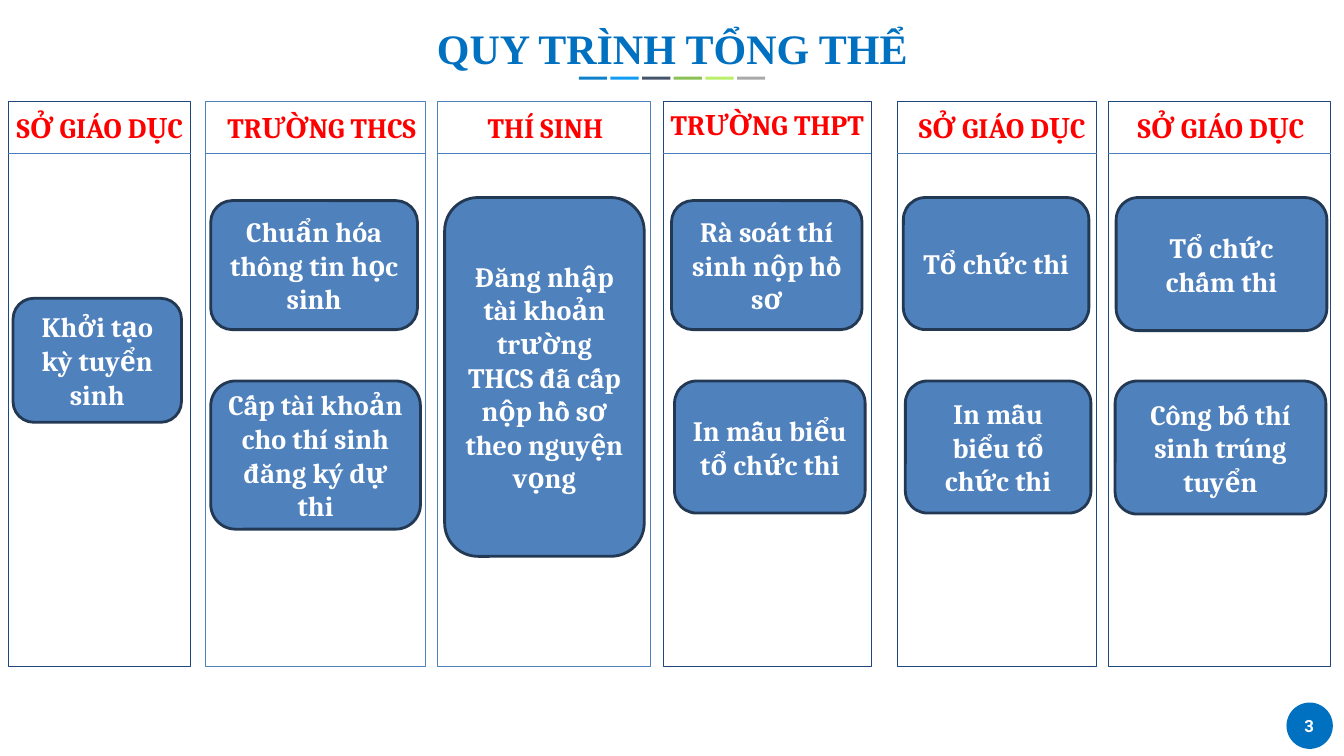
from dataclasses import dataclass

from pptx import Presentation
from pptx.dml.color import RGBColor
from pptx.enum.shapes import MSO_CONNECTOR, MSO_SHAPE
from pptx.enum.text import MSO_ANCHOR, PP_ALIGN
from pptx.oxml.ns import qn
from pptx.util import Inches, Pt

RECTANGLE = MSO_SHAPE.RECTANGLE
ROUNDED = MSO_SHAPE.ROUNDED_RECTANGLE
OVAL = MSO_SHAPE.OVAL
STRAIGHT = MSO_CONNECTOR.STRAIGHT
CENTER = PP_ALIGN.CENTER
MIDDLE = MSO_ANCHOR.MIDDLE
TOP = MSO_ANCHOR.TOP

COLORS = {
    "title": "0070C0", "heading": "FF0000", "white": "FFFFFF",
    "step": "4F81BD", "step_edge": "233953", "rule": "4B7EBC",
    "navy": "1F497D", "blue": "4F81BD",
}
ACCENTS = ["0E80C9", "119CF4", "445469", "8AC153", "BAEF69", "A9A8AB"]
LANE_TOP, LANE_HEIGHT, RULE_DROP = 1.01, 5.6, 0.51
HEADING_WIDTH, HEADING_HEIGHT = 2.58, 0.38


@dataclass
class Box:
    """A rectangle in inches."""
    left: float
    top: float
    width: float
    height: float

    def inner(self, left, top, width, height):
        """Return a box placed relative to this one."""
        return Box(self.left + left, self.top + top, width, height)

    def lengths(self):
        """Return the four measures as slide lengths."""
        return [Inches(n) for n in (self.left, self.top, self.width, self.height)]


@dataclass
class Lane:
    """One column: its place, edge, heading offset and steps."""
    left: float
    width: float
    edge: str
    heading: str
    heading_left: float
    heading_drop: float
    steps: list


LANES = [
    Lane(0.08, 1.81, "navy", "SỞ GIÁO DỤC", -0.38, 0.06, [
        ("Khởi tạo kỳ tuyển sinh", (0.05, 1.95, 1.67, 1.23))]),
    Lane(2.04, 2.18, "blue", "TRƯỜNG THCS", -0.14, 0.06, [
        ("Chuẩn hóa thông tin học sinh", (0.05, 0.98, 2.05, 1.28)),
        ("Cấp tài khoản cho thí sinh đăng ký dự thi", (0.05, 2.77, 2.08, 1.47))]),
    Lane(4.34, 2.11, "blue", "THÍ SINH", -0.22, 0.06, [
        ("Đăng nhập tài khoản trường THCS đã cấp nộp hồ sơ theo nguyện vọng",
         (0.07, 0.95, 1.98, 3.56))]),
    Lane(6.58, 2.06, "navy", "TRƯỜNG THPT", -0.26, 0.03, [
        ("Rà soát thí sinh nộp hồ sơ", (0.08, 0.98, 1.89, 1.28)),
        ("In mẫu biểu tổ chức thi", (0.11, 2.77, 1.89, 1.31))]),
    Lane(8.9, 1.98, "navy", "SỞ GIÁO DỤC", -0.25, 0.06, [
        ("Tổ chức thi", (0.06, 0.95, 1.84, 1.31)),
        ("In mẫu biểu tổ chức thi", (0.08, 2.77, 1.84, 1.31))]),
    Lane(10.99, 2.21, "navy", "SỞ GIÁO DỤC", -0.17, 0.06, [
        ("Tổ chức chấm thi", (0.08, 0.95, 2.09, 1.32)),
        ("Công bố thí sinh trúng tuyển", (0.07, 2.77, 2.09, 1.32))]),
]


def rgb(name):
    """Look up a named colour."""
    return RGBColor.from_string(COLORS.get(name, name))


def add_block(page, kind, box, fill=None, edge=None, weight=0.75):
    """Add a preset shape with an optional fill and outline."""
    block = page.shapes.add_shape(kind, *box.lengths())
    block.shadow.inherit = False
    if fill:
        block.fill.solid()
        block.fill.fore_color.rgb = rgb(fill)
    else:
        block.fill.background()
    if edge:
        block.line.color.rgb = rgb(edge)
        block.line.width = Pt(weight)
    else:
        block.line.fill.background()
    return block


def write(shape, text, size, font, color, insets=(0.1, 0.05), anchor=MIDDLE, spacing=None):
    """Write one centred bold run into a shape."""
    frame = shape.text_frame
    frame.word_wrap = True
    frame.vertical_anchor = anchor
    frame.margin_left = frame.margin_right = Inches(insets[0])
    frame.margin_top = frame.margin_bottom = Inches(insets[1])
    para = frame.paragraphs[0]
    para.alignment = CENTER
    if spacing:
        para.line_spacing = spacing
    span = para.add_run()
    span.text = text
    span.font.size = Pt(size)
    span.font.name = font
    span.font.bold = True
    span.font.color.rgb = rgb(color)


def draw_title(page, box):
    """Draw the title with its row of accent dashes."""
    title = page.shapes.add_textbox(*box.lengths())
    write(title, "QUY TRÌNH TỔNG THỂ", 30, "Times New Roman", "title", spacing=0.9)
    for index, color in enumerate(ACCENTS):
        dash = box.inner(4.82 + index * 0.314, 0.49, 0.28, 0.03)
        add_block(page, RECTANGLE, dash, color)


def draw_lane(page, box, lane):
    """Draw one column with its heading, rule and steps."""
    add_block(page, RECTANGLE, box, edge=lane.edge)
    heading = box.inner(lane.heading_left, lane.heading_drop, HEADING_WIDTH, HEADING_HEIGHT)
    label = page.shapes.add_textbox(*heading.lengths())
    write(label, lane.heading, 20, "Cambria", "heading", (0.05, 0.03))
    height = Inches(box.top + RULE_DROP)
    rule = page.shapes.add_connector(
        STRAIGHT, Inches(box.left), height, Inches(box.left + box.width), height)
    rule.line.color.rgb = rgb("rule")
    rule.line.width = Pt(0.75)
    properties = rule._element.spPr
    properties.append(properties.makeelement(qn("a:effectLst"), {}))
    for text, place in lane.steps:
        step = add_block(page, ROUNDED, box.inner(*place), "step", "step_edge", 2)
        write(step, text, 20, "Cambria", "white")


def draw_page_number(page, box):
    """Draw the page number over its disc."""
    add_block(page, OVAL, box, "title")
    label = page.shapes.add_textbox(*box.inner(-0.2, 0.03, 0.85, 0.4).lengths())
    write(label, "3", 12, "Roboto", "white", (0.2, 0.1), TOP)


def main():
    """Build and save the deck."""
    deck = Presentation()
    deck.slide_width, deck.slide_height = Inches(13.33), Inches(7.5)
    page = deck.slides.add_slide(deck.slide_layouts[6])
    draw_title(page, Box(0.92, 0.27, 11.5, 0.47))
    for lane in LANES:
        draw_lane(page, Box(lane.left, LANE_TOP, lane.width, LANE_HEIGHT), lane)
    draw_page_number(page, Box(12.76, 6.97, 0.46, 0.46))
    deck.save("out.pptx")


if __name__ == "__main__":
    main()
